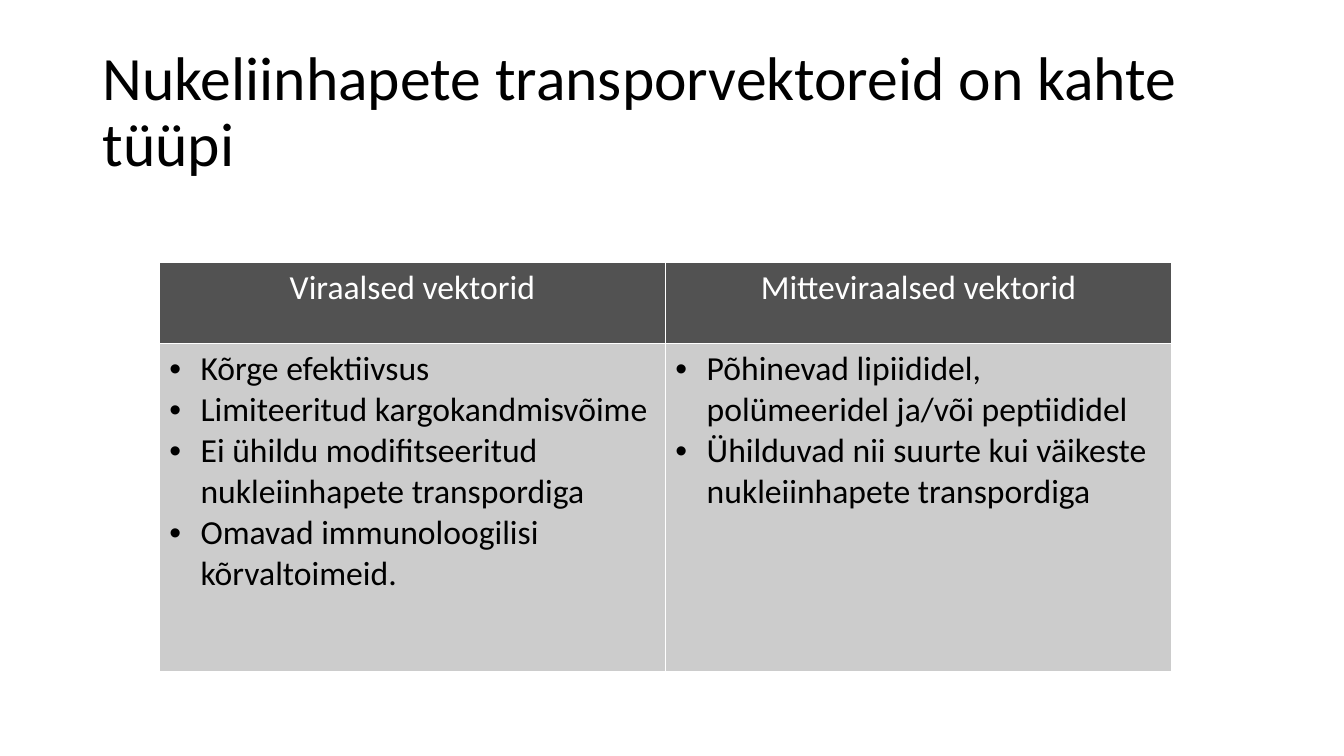
from lxml import etree
from pptx import Presentation
from pptx.dml.color import RGBColor
from pptx.enum.text import MSO_ANCHOR, PP_ALIGN
from pptx.oxml.ns import qn
from pptx.util import Inches, Pt

LEFT, CENTER = PP_ALIGN.LEFT, PP_ALIGN.CENTER
MIDDLE = MSO_ANCHOR.MIDDLE
FONT = "Calibri"
BLACK, WHITE, DARK, LIGHT = "000000", "FFFFFF", "525252", "CCCCCC"
INDENT = Inches(0.31)

TITLE = "Nukeliinhapete transporvektoreid on kahte tüüpi"
VECTORS = {
    "Viraalsed vektorid": [
        "Kõrge efektiivsus",
        "Limiteeritud kargokandmisvõime",
        "Ei ühildu modifitseeritud nukleiinhapete transpordiga",
        "Omavad immunoloogilisi kõrvaltoimeid.",
    ],
    "Mitteviraalsed vektorid": [
        "Põhinevad lipiididel, polümeeridel ja/või peptiididel",
        "Ühilduvad nii suurte kui väikeste nukleiinhapete transpordiga",
    ],
}


def color(code):
    return RGBColor.from_string(code)


def add_bullet(para):
    props = para._p.get_or_add_pPr()
    props.set("marL", str(INDENT))
    props.set("indent", str(-INDENT))
    etree.SubElement(props, qn("a:buFont")).set("typeface", "Arial")
    etree.SubElement(props, qn("a:buChar")).set("char", "•")


def write(frame, lines, size=24, ink=BLACK, align=LEFT, spacing=1.0, bullet=False):
    frame.word_wrap = True
    for i, line in enumerate(lines):
        para = frame.add_paragraph() if i else frame.paragraphs[0]
        para.alignment = align
        para.line_spacing = spacing
        if bullet:
            add_bullet(para)
        run = para.add_run()
        run.text = line
        font = run.font
        font.name, font.size, font.bold = FONT, Pt(size), False
        font.color.rgb = color(ink)


def add_title(slide, text):
    box = slide.shapes.add_textbox(Inches(0.92), Inches(0.4), Inches(11.5), Inches(1.45))
    box.text_frame.vertical_anchor = MIDDLE
    write(box.text_frame, [text], size=44, spacing=0.9)


def style_cell(cell, fill):
    # Borders go before the fill in the cell properties
    props = cell._tc.get_or_add_tcPr()
    for side in "LRTB":
        line = etree.SubElement(props, qn("a:ln" + side), w=str(Pt(1)))
        solid = etree.SubElement(line, qn("a:solidFill"))
        etree.SubElement(solid, qn("a:srgbClr"), val=WHITE)
    cell.fill.solid()
    cell.fill.fore_color.rgb = color(fill)


def add_table(slide, groups):
    frame = slide.shapes.add_table(
        2, len(groups), Inches(1.58), Inches(2.6), Inches(10.04), Inches(4.06))
    table = frame.table
    table.horz_banding = False
    for row, height in zip(table.rows, (0.81, 3.25)):
        row.height = Inches(height)
    for col, (name, points) in enumerate(groups.items()):
        head, body = table.cell(0, col), table.cell(1, col)
        style_cell(head, DARK)
        write(head.text_frame, [name], ink=WHITE, align=CENTER)
        style_cell(body, LIGHT)
        write(body.text_frame, points, bullet=True)


def main():
    deck = Presentation()
    deck.slide_width, deck.slide_height = Inches(13.33), Inches(7.5)
    slide = deck.slides.add_slide(deck.slide_layouts[6])
    add_title(slide, TITLE)
    add_table(slide, VECTORS)
    deck.save("out.pptx")


if __name__ == "__main__":
    main()
